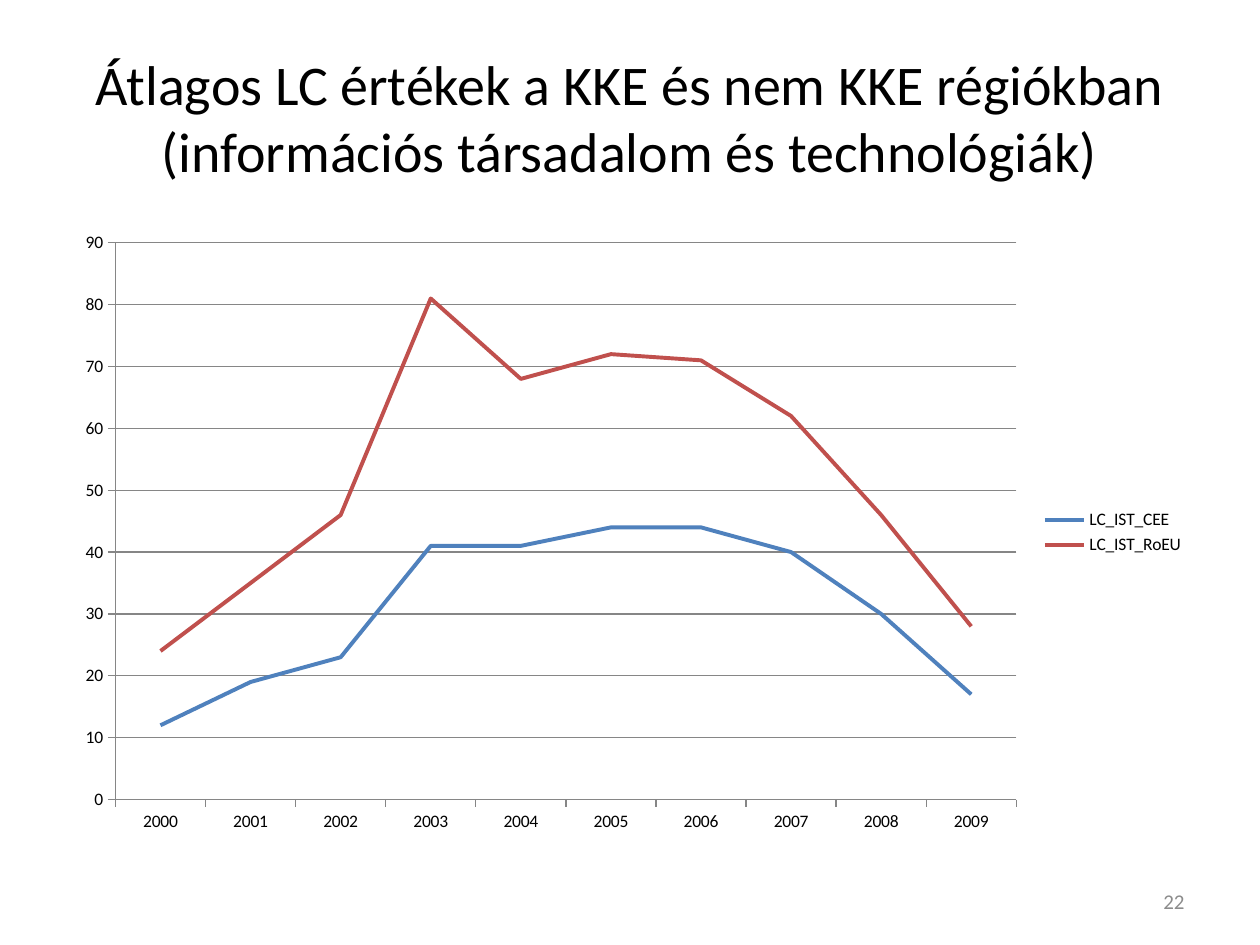
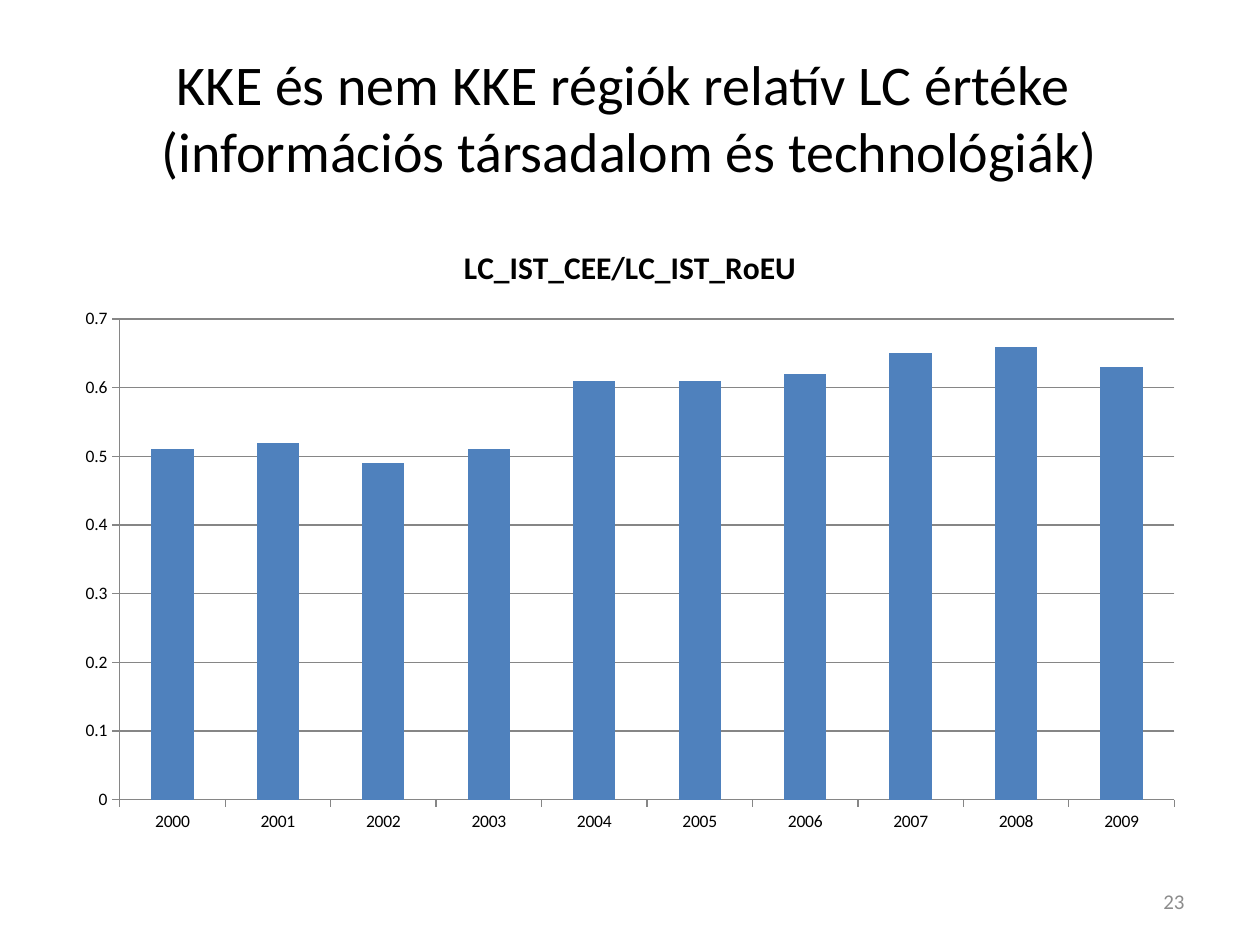
from pptx import Presentation
from pptx.chart.data import CategoryChartData
from pptx.dml.color import RGBColor
from pptx.enum.chart import XL_CHART_TYPE, XL_LEGEND_POSITION, XL_TICK_MARK
from pptx.enum.text import MSO_ANCHOR, PP_ALIGN
from pptx.util import Inches, Pt

LINE, COLUMN = XL_CHART_TYPE.LINE, XL_CHART_TYPE.COLUMN_CLUSTERED
LEGEND_RIGHT = XL_LEGEND_POSITION.RIGHT
TICK_OUTSIDE, TICK_NONE = XL_TICK_MARK.OUTSIDE, XL_TICK_MARK.NONE
MIDDLE = MSO_ANCHOR.MIDDLE
CENTER, RIGHT = PP_ALIGN.CENTER, PP_ALIGN.RIGHT

FONT = "Calibri"
COLORS = {"text": "000000", "number": "8C8C8C", "grid": "868686",
          "blue": "4F81BD", "red": "C0504D"}
SERIES_COLORS = ["blue", "red"]
YEARS = [str(year) for year in range(2000, 2010)]
AVERAGES = {
    "LC_IST_CEE": [12, 19, 23, 41, 41, 44, 44, 40, 30, 17],
    "LC_IST_RoEU": [24, 35, 46, 81, 68, 72, 71, 62, 46, 28],
}
RATIO = {
    "LC_IST_CEE/LC_IST_RoEU":
        [0.51, 0.52, 0.49, 0.51, 0.61, 0.61, 0.62, 0.65, 0.66, 0.63],
}


def color(name):
    return RGBColor.from_string(COLORS[name])


def set_font(font, size, color_name="text", bold=False):
    font.name = FONT
    font.size = Pt(size)
    font.bold = bold
    font.color.rgb = color(color_name)


def add_text(page, text, left, top, width, height, *, size,
             color_name="text", align=CENTER):
    """Add a wrapped, vertically centred text box; a \\v breaks the line."""
    box = page.shapes.add_textbox(Inches(left), Inches(top),
                                  Inches(width), Inches(height))
    frame = box.text_frame
    frame.word_wrap = True
    frame.vertical_anchor = MIDDLE
    para = frame.paragraphs[0]
    para.text = text
    para.alignment = align
    for span in para.runs:
        set_font(span.font, size, color_name)


def add_page(deck, title, number):
    page = deck.slides.add_slide(deck.slide_layouts[6])
    add_text(page, title, 0.5, 0.3, 9, 1.25, size=32)
    add_text(page, str(number), 7.17, 6.95, 2.33, 0.4, size=12,
             color_name="number", align=RIGHT)
    return page


def style_line(line, color_name, width=0.75):
    line.color.rgb = color(color_name)
    line.width = Pt(width)


def style_axes(chart, maximum, step):
    for axis in (chart.category_axis, chart.value_axis):
        axis.major_tick_mark = TICK_OUTSIDE
        axis.minor_tick_mark = TICK_NONE
        style_line(axis.format.line, "grid")
    values = chart.value_axis
    values.minimum_scale = 0
    values.maximum_scale = maximum
    values.major_unit = step
    values.has_major_gridlines = True
    style_line(values.major_gridlines.format.line, "grid")


def add_year_chart(page, kind, series_values, maximum, step):
    data = CategoryChartData()
    data.categories = YEARS
    for name, values in series_values.items():
        data.add_series(name, values)
    chart = page.shapes.add_chart(kind, Inches(0.5), Inches(1.75),
                                  Inches(9), Inches(4.95), data).chart
    set_font(chart.font, 10)
    chart.has_title = False
    chart.has_legend = False
    chart.plots[0].vary_by_categories = False
    style_axes(chart, maximum, step)
    return chart


def add_line_chart(page):
    chart = add_year_chart(page, LINE, AVERAGES, 90, 10)
    chart.has_legend = True
    chart.legend.position = LEGEND_RIGHT
    chart.legend.include_in_layout = False
    for series, name in zip(chart.plots[0].series, SERIES_COLORS):
        series.smooth = False
        style_line(series.format.line, name, 2.25)


def add_column_chart(page):
    chart = add_year_chart(page, COLUMN, RATIO, 0.7, 0.1)
    plot = chart.plots[0]
    plot.gap_width = 150
    fill = plot.series[0].format.fill
    fill.solid()
    fill.fore_color.rgb = color("blue")
    chart.has_title = True
    para = chart.chart_title.text_frame.paragraphs[0]
    span = para.add_run()
    span.text = plot.series[0].name
    set_font(span.font, 18, bold=True)


def main():
    deck = Presentation()
    deck.slide_width, deck.slide_height = Inches(10), Inches(7.5)
    add_line_chart(add_page(
        deck, "Átlagos LC értékek a KKE és nem KKE régiókban "
              "(információs társadalom és technológiák)", 22))
    add_column_chart(add_page(
        deck, "KKE és nem KKE régiók relatív LC értéke \v"
              "(információs társadalom és technológiák)", 23))
    deck.save("out.pptx")


if __name__ == "__main__":
    main()
